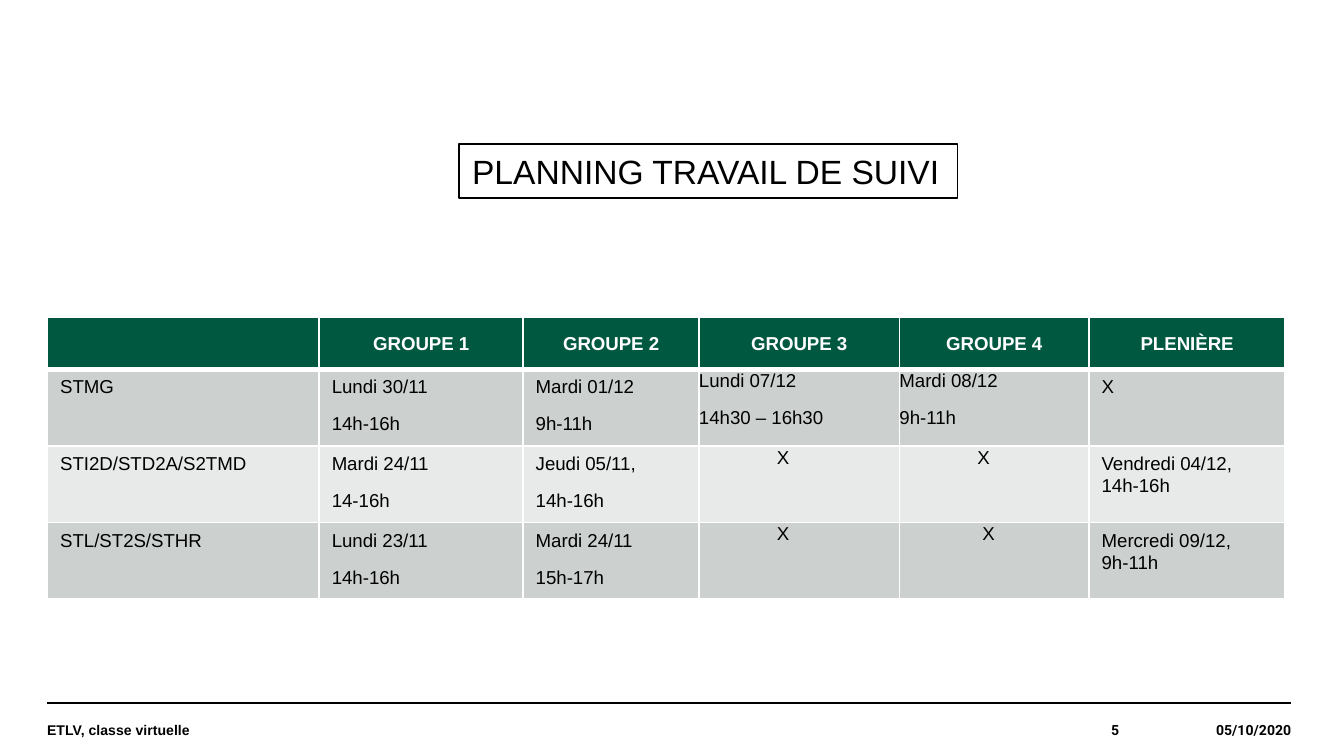
from lxml import etree
from pptx import Presentation
from pptx.dml.color import RGBColor
from pptx.enum.shapes import MSO_CONNECTOR
from pptx.enum.text import MSO_ANCHOR as ANCHOR, MSO_AUTO_SIZE as FIT, PP_ALIGN as ALIGN
from pptx.oxml.ns import qn
from pptx.util import Pt

COLORS = {
    "black": "000000",
    "white": "FFFFFF",
    "header": "005841",
    "odd": "CCD1CF",
    "even": "E7EAE9",
}


def format_text(paragraph, size, color, bold=False, font="Arial"):
    for run in paragraph.runs:
        run.font.name = font
        run.font.size = Pt(size)
        run.font.bold = bold
        run.font.color.rgb = RGBColor.from_string(COLORS[color])


def add_border(cell, side, width):
    properties = cell._tc.get_or_add_tcPr()
    border = etree.SubElement(properties, qn(f"a:ln{side}"), w=str(Pt(width)))
    fill = etree.SubElement(border, qn("a:solidFill"))
    etree.SubElement(fill, qn("a:srgbClr"), val=COLORS["white"])


prs = Presentation()
prs.slide_width = Pt(720)
prs.slide_height = Pt(405)
slide = prs.slides.add_slide(prs.slide_layouts[5])

heading = slide.shapes.title
heading.left, heading.top, heading.width, heading.height = Pt(245.7), Pt(77), Pt(267.3), Pt(29.1)
heading.line.color.rgb = RGBColor.from_string(COLORS["black"])
heading.line.width = Pt(1)
heading_frame = heading.text_frame
heading_frame.text = "PLANNING TRAVAIL DE SUIVI"
heading_frame.auto_size = FIT.NONE
heading_frame.word_wrap = True
heading_frame.margin_right = 0
heading_frame.vertical_anchor = ANCHOR.MIDDLE
heading_frame.paragraphs[0].alignment = ALIGN.LEFT
format_text(heading_frame.paragraphs[0], 18, "black")

schedule = [
    ["", "GROUPE 1", "GROUPE 2", "GROUPE 3", "GROUPE 4", "PLENIÈRE"],
    ["STMG", "Lundi 30/11\n14h-16h", "Mardi 01/12\n9h-11h",
     "Lundi 07/12\n14h30 – 16h30", "Mardi 08/12\n9h-11h", "X"],
    ["STI2D/STD2A/S2TMD", "Mardi 24/11\n14-16h", "Jeudi 05/11,\n14h-16h",
     "X", "X", "Vendredi 04/12, 14h-16h"],
    ["STL/ST2S/STHR", "Lundi 23/11\n14h-16h", "Mardi 24/11\n15h-17h",
     "X", "X", "Mercredi 09/12, 9h-11h"],
]
column_widths = [145.5, 109.3, 94.2, 107.4, 101.6, 105]
row_heights = [27.6, 41.1, 41.1, 41.1]
cross_indents = {(2, 3): 41.7, (2, 4): 41.7, (3, 3): 41.7, (3, 4): 44.5}

planning = slide.shapes.add_table(
    len(row_heights), len(column_widths), Pt(25.5), Pt(170.2),
    Pt(sum(column_widths)), Pt(sum(row_heights))).table
for column, width in zip(planning.columns, column_widths):
    column.width = Pt(width)
for row, height in zip(planning.rows, row_heights):
    row.height = Pt(height)

for r, entries in enumerate(schedule):
    is_header = r == 0
    band = "header" if is_header else "odd" if r % 2 else "even"
    for c, entry in enumerate(entries):
        cell = planning.cell(r, c)
        cell.text = entry
        tight = c in (3, 4) or not entry
        cell.margin_left = Pt(cross_indents.get((r, c), 0 if tight else 6.75))
        cell.margin_right = Pt(0 if tight else 6.75)
        cell.margin_top = cell.margin_bottom = Pt(0 if tight else 3.4)
        cell.vertical_anchor = ANCHOR.MIDDLE if is_header else ANCHOR.TOP
        for side, width in zip("LRTB", (1, 1, 3 if r == 1 else 1, 3 if is_header else 1)):
            add_border(cell, side, width)
        cell.fill.solid()
        cell.fill.fore_color.rgb = RGBColor.from_string(COLORS[band])
        for paragraph in cell.text_frame.paragraphs:
            paragraph.alignment = ALIGN.CENTER if is_header else ALIGN.LEFT
            paragraph.line_spacing = 1.07
            paragraph.space_after = Pt(8)
            format_text(paragraph, 10, "white" if is_header else "black", bold=is_header)

footer_rule = slide.shapes.add_connector(
    MSO_CONNECTOR.STRAIGHT, Pt(25.2), Pt(376.7), Pt(691.8), Pt(376.7))
footer_rule.line.color.rgb = RGBColor.from_string(COLORS["black"])
footer_rule.line.width = Pt(0.8)
etree.SubElement(footer_rule._element.spPr, qn("a:effectLst"))

footers = [
    ("ETLV, classe virtuelle", 25.2, 459.4, ALIGN.LEFT, "Arial"),
    ("5", 493.2, 106.4, ALIGN.RIGHT, "Roboto"),
    ("05/10/2020", 599.8, 92, ALIGN.RIGHT, "Roboto"),
]
for wording, left, width, alignment, font in footers:
    frame = slide.shapes.add_textbox(Pt(left), Pt(376.7), Pt(width), Pt(28.3)).text_frame
    frame.text = wording
    frame.word_wrap = True
    frame.vertical_anchor = ANCHOR.MIDDLE
    frame.margin_left = frame.margin_right = frame.margin_top = frame.margin_bottom = 0
    frame.paragraphs[0].alignment = alignment
    format_text(frame.paragraphs[0], 7.5, "black", True, font)

prs.save("out.pptx")
